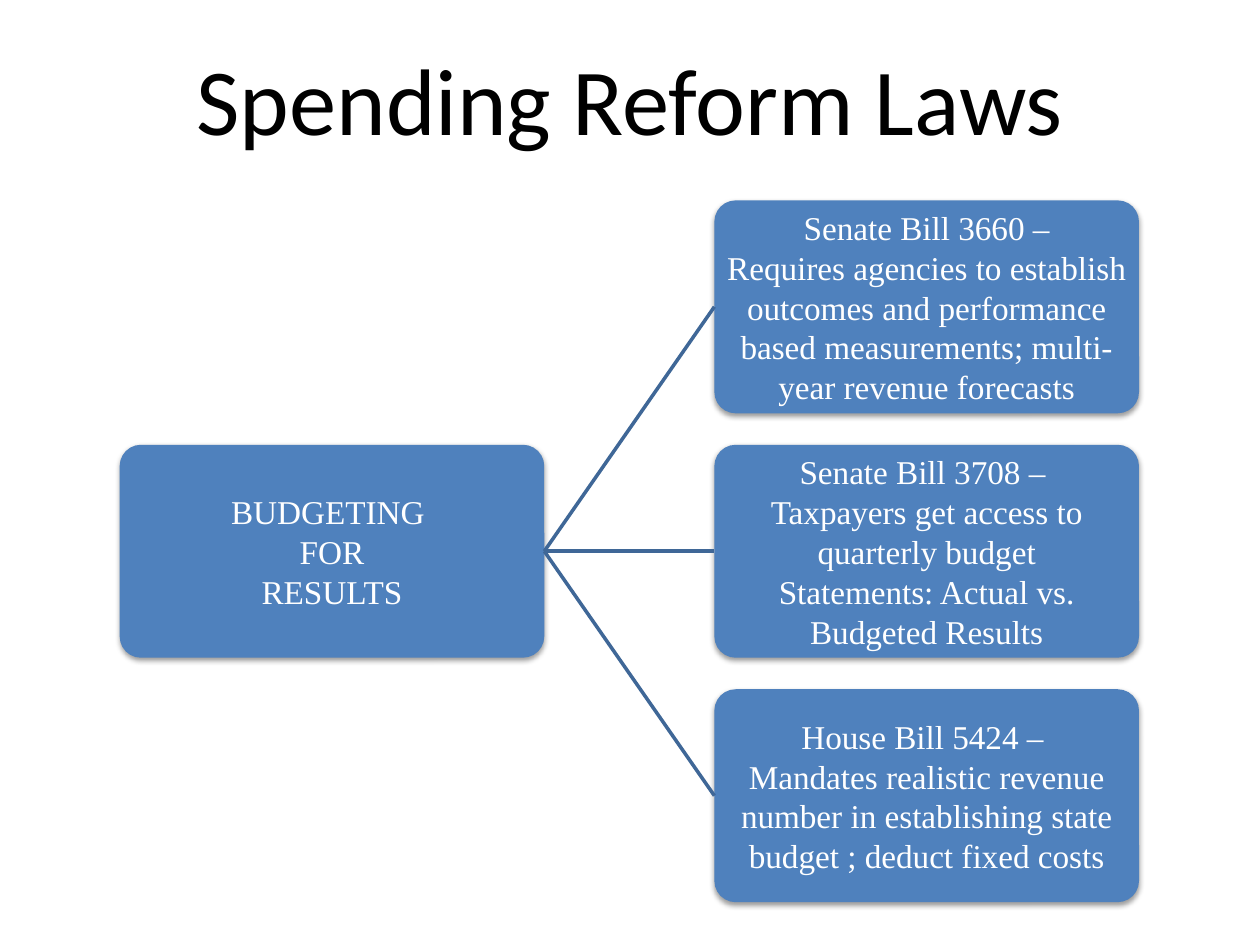
from pptx import Presentation
from pptx.dml.color import RGBColor
from pptx.enum.shapes import MSO_CONNECTOR, MSO_SHAPE
from pptx.enum.text import MSO_ANCHOR, PP_ALIGN
from pptx.oxml import parse_xml
from pptx.oxml.ns import nsdecls
from pptx.util import Inches, Pt

TITLE = "Spending Reform Laws"
ROOT = ["BUDGETING ", "FOR", "RESULTS"]
BILLS = [
    ["Senate Bill 3660 –",
     "Requires agencies to establish outcomes and performance based measurements; multi-year revenue forecasts"],
    ["Senate Bill 3708 – ",
     "Taxpayers get access to quarterly budget",
     "Statements: Actual vs. Budgeted Results"],
    ["House Bill 5424 – ",
     "Mandates realistic revenue number in establishing state budget ; deduct fixed costs"],
]

THEME = {
    "title": ("Calibri", Pt(54), RGBColor(0, 0, 0)),
    "body": ("Times New Roman", Pt(19), RGBColor(255, 255, 255)),
    "box": RGBColor(0x4F, 0x81, 0xBD),
    "line": RGBColor(0x3F, 0x67, 0x97),
}

BOX_W, BOX_H = 3.37, 1.69
ROOT_LEFT, BILL_LEFT = 0.95, 5.67
TOP, PITCH = 1.59, 1.94
INSET = 0.01

SHADOW = (
    f'<a:effectLst {nsdecls("a")}><a:outerShdw blurRad="40000" dist="20000" '
    'dir="5400000" rotWithShape="0"><a:srgbClr val="000000">'
    '<a:alpha val="38000"/></a:srgbClr></a:outerShdw></a:effectLst>'
)


def write(shape, lines, style, inset):
    tf = shape.text_frame
    tf.word_wrap = True
    tf.vertical_anchor = MSO_ANCHOR.MIDDLE
    tf.margin_left = tf.margin_right = Inches(inset)
    tf.margin_top = tf.margin_bottom = Inches(inset)
    for i, line in enumerate(lines):
        p = tf.add_paragraph() if i else tf.paragraphs[0]
        p.text = line
        p.alignment = PP_ALIGN.CENTER
        p.font.name, p.font.size, p.font.color.rgb = THEME[style]


def add_box(s, left, row, lines):
    box = s.shapes.add_shape(
        MSO_SHAPE.ROUNDED_RECTANGLE, Inches(left), Inches(TOP + row * PITCH),
        Inches(BOX_W), Inches(BOX_H))
    box.adjustments[0] = 0.1
    box.fill.solid()
    box.fill.fore_color.rgb = THEME["box"]
    box.line.fill.background()
    box._element.spPr.append(parse_xml(SHADOW))
    write(box, lines, "body", INSET)
    return box


def join(s, start, end):
    line = s.shapes.add_connector(MSO_CONNECTOR.STRAIGHT, 0, 0, 0, 0)
    line.begin_connect(start, 3)
    line.end_connect(end, 1)
    line.line.color.rgb = THEME["line"]
    line.line.width = Pt(2)
    line._element.spPr.append(parse_xml(f'<a:effectLst {nsdecls("a")}/>'))


def main():
    prs = Presentation()
    prs.slide_width, prs.slide_height = Inches(10), Inches(7.5)
    s = prs.slides.add_slide(prs.slide_layouts[6])
    title = s.shapes.add_textbox(Inches(0.5), 0, Inches(9), Inches(1.55))
    write(title, [TITLE], "title", 0.05)
    root = add_box(s, ROOT_LEFT, (len(BILLS) - 1) / 2, ROOT)
    for row, lines in enumerate(BILLS):
        join(s, root, add_box(s, BILL_LEFT, row, lines))
    prs.save("out.pptx")


if __name__ == "__main__":
    main()
